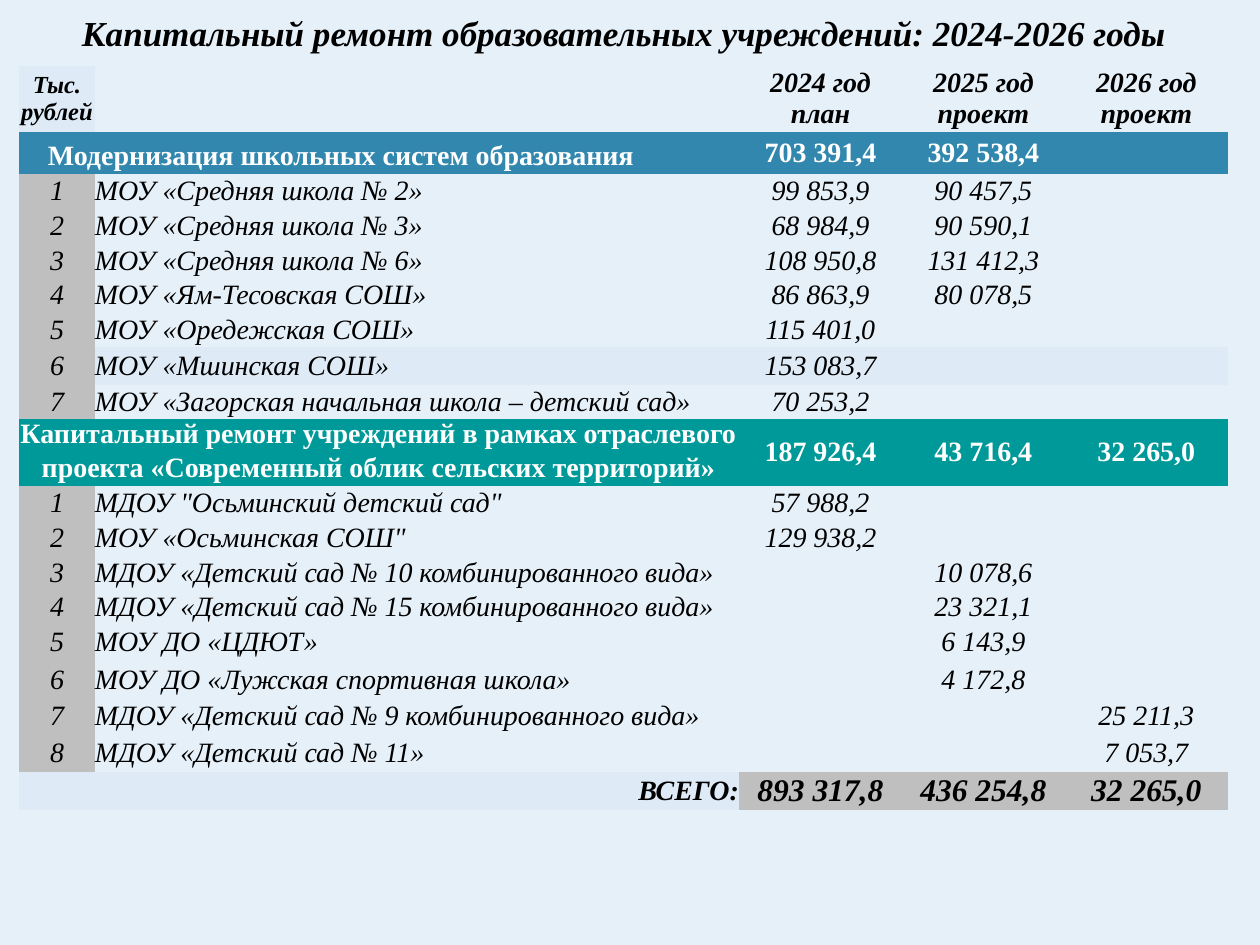
import pptx
import pptx.util
import pptx.dml.color
import pptx.enum.text
import lxml.etree

PX = 914400 // 126
ALIGN = pptx.enum.text.PP_ALIGN
ANCHOR = pptx.enum.text.MSO_ANCHOR
PALE, GREY, BLUE, TEAL = "DEEBF7", "BFBFBF", "3187AD", "009999"


def color(value):
    return pptx.dml.color.RGBColor.from_string(value)


def write(frame, text, size=16, ink="000000", bold=False, italic=False,
          align=ALIGN.CENTER, spacing=None):
    frame.word_wrap = True
    frame.text = text
    for paragraph in frame.paragraphs:
        paragraph.alignment = align
        if spacing:
            paragraph.line_spacing = spacing
        for run in paragraph.runs:
            run.font.name = "Times New Roman"
            run.font.size = pptx.util.Pt(size)
            run.font.bold = bold
            run.font.italic = italic
            run.font.color.rgb = color(ink)
        if not paragraph.runs:
            # An empty cell needs a small size so that its row stays low
            lxml.etree.SubElement(
                paragraph._p, pptx.oxml.ns.qn("a:endParaRPr"), sz=str(size * 100))


presentation = pptx.Presentation()
presentation.slide_width = 1260 * PX
presentation.slide_height = 945 * PX
slide = presentation.slides.add_slide(presentation.slide_layouts[6])
slide.background.fill.solid()
slide.background.fill.fore_color.rgb = color("E6F0F9")

# Table content: a row is its kind, its height and its five cells
rows = [
    ("header", 66, ["Тыс. рублей", "", "2024 год\nплан", "2025 год\nпроект", "2026 год\nпроект"]),
    (BLUE, 42, ["", "", "703 391,4", "392 538,4", ""]),
    ("item", 35, ["1", "МОУ «Средняя школа № 2»", "99 853,9", "90 457,5", ""]),
    ("item", 35, ["2", "МОУ «Средняя школа № 3»", "68 984,9", "90 590,1", ""]),
    ("item", 34, ["3", "МОУ «Средняя школа № 6»", "108 950,8", "131 412,3", ""]),
    ("item", 34, ["4", "МОУ «Ям-Тесовская СОШ»", "86 863,9", "80 078,5", ""]),
    ("item", 33, ["5", "МОУ «Оредежская СОШ»", "115 401,0", "", ""]),
    ("shaded", 38, ["6", "МОУ «Мшинская СОШ»", "153 083,7", "", ""]),
    ("item", 33, ["7", "МОУ «Загорская начальная школа – детский сад»", "70 253,2", "", ""]),
    (TEAL, 67, ["", "", "187 926,4", "43 716,4", "32 265,0"]),
    ("item", 35, ["1", 'МДОУ "Осьминский детский сад"', "57 988,2", "", ""]),
    ("item", 33, ["2", 'МОУ «Осьминская СОШ"', "129 938,2", "", ""]),
    ("item", 35, ["3", "МДОУ «Детский сад № 10 комбинированного вида»", "", "10 078,6", ""]),
    ("item", 33, ["4", "МДОУ «Детский сад № 15 комбинированного вида»", "", "23 321,1", ""]),
    ("item", 36, ["5", "МОУ ДО «ЦДЮТ»", "", "6 143,9", ""]),
    ("item", 39, ["6", "МОУ ДО «Лужская спортивная школа»", "", "4 172,8", ""]),
    ("item", 34, ["7", "МДОУ «Детский сад № 9 комбинированного вида»", "", "", "25 211,3"]),
    ("item", 38, ["8", "МДОУ «Детский сад № 11»", "", "", "7 053,7"]),
    ("total", 38, ["", "ВСЕГО:", "893 317,8", "436 254,8", "32 265,0"]),
]
column_widths = [76, 644, 163, 163, 163]
row_fills = {
    "header": [PALE, None, None, None, None],
    "item": [GREY, None, None, None, None],
    "shaded": [GREY] + [PALE] * 4,
    "total": [PALE] * 2 + [GREY] * 3,
    BLUE: [BLUE] * 5,
    TEAL: [TEAL] * 5,
}

# Table without style or grid
table = slide.shapes.add_table(
    len(rows), len(column_widths), 19 * PX, 66 * PX,
    sum(column_widths) * PX, sum(row[1] for row in rows) * PX).table
table.first_row = table.horz_banding = False
style = table._tbl.tblPr.find(pptx.oxml.ns.qn("a:tableStyleId"))
style.text = "{2D5ABB26-0587-4C30-8999-92F81FD0307C}"
for column, width in zip(table.columns, column_widths):
    column.width = width * PX

for row_index, (kind, height, texts) in enumerate(rows):
    table.rows[row_index].height = height * PX
    section = kind in (BLUE, TEAL)
    for column_index, text in enumerate(texts):
        cell = table.cell(row_index, column_index)
        cell.margin_left = cell.margin_right = cell.margin_top = cell.margin_bottom = 0
        cell.vertical_anchor = ANCHOR.MIDDLE
        fill = row_fills[kind][column_index]
        if fill:
            cell.fill.solid()
            cell.fill.fore_color.rgb = color(fill)
        else:
            cell.fill.background()
        size, align = 16, ALIGN.CENTER
        if kind == "header" and column_index == 0:
            size = 14
        elif kind == "total" and column_index > 1:
            size = 18
        if column_index == 1:
            align = ALIGN.RIGHT if kind == "total" else ALIGN.LEFT
        write(cell.text_frame, text, size=size, align=align,
              ink="FFFFFF" if section else "000000",
              bold=section or kind in ("header", "total"), italic=not section)
    if section:
        table.cell(row_index, 0).merge(table.cell(row_index, 1))

# Title and the labels lying over the section rows
labels = [
    (15, 16, 1218, 69, 0, "Капитальный ремонт образовательных учреждений: 2024-2026 годы",
     dict(size=20, italic=True, spacing=0.9)),
    (0, 132, 682, 40, 6, "Модернизация школьных систем образования", dict(ink="FFFFFF")),
    (11, 413, 735, 71, 3, "Капитальный ремонт учреждений в рамках отраслевого "
     "проекта «Современный облик сельских территорий»", dict(ink="FFFFFF")),
]
for left, top, width, height, inset, text, text_format in labels:
    box = slide.shapes.add_textbox(left * PX, top * PX, width * PX, height * PX)
    frame = box.text_frame
    frame.margin_left = frame.margin_right = frame.margin_bottom = 0
    frame.margin_top = inset * PX
    write(frame, text, bold=True, **text_format)

presentation.save("out.pptx")
